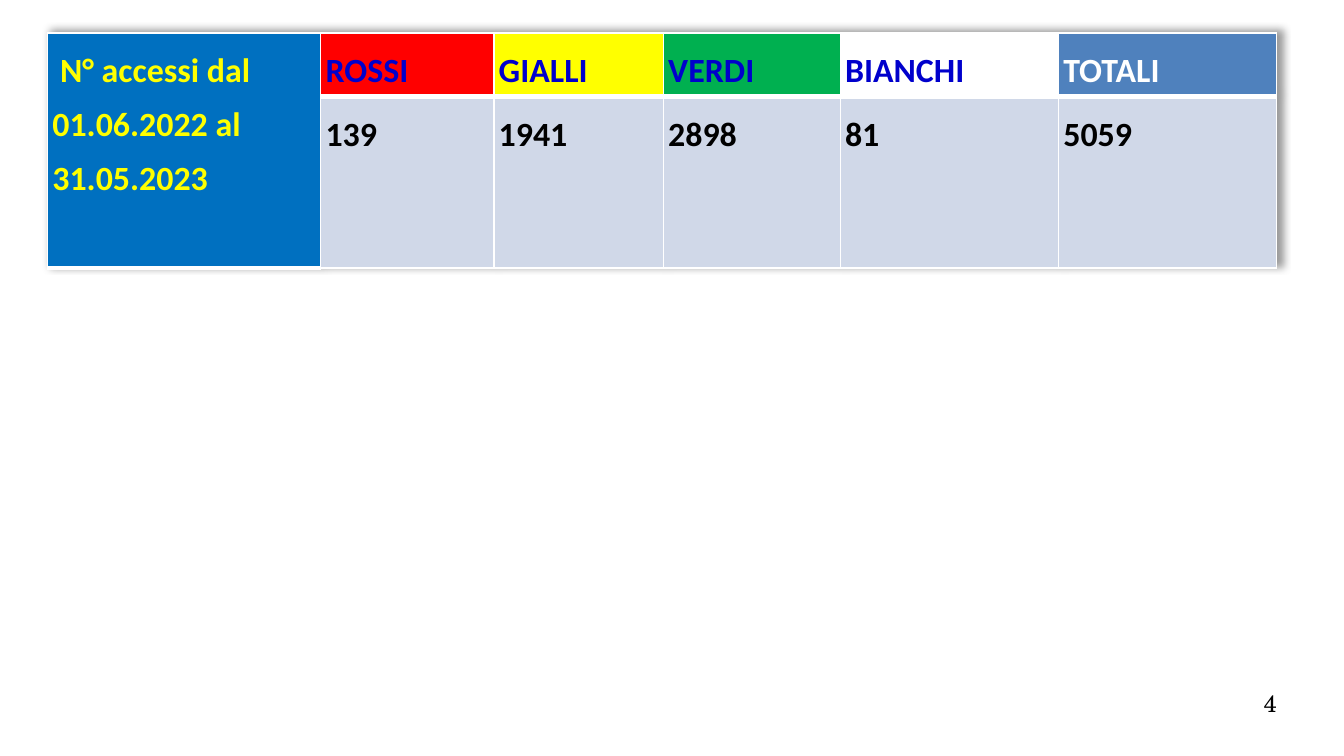
from lxml import etree
from pptx import Presentation
from pptx.dml.color import RGBColor
from pptx.enum import text
from pptx.oxml import parse_xml
from pptx.oxml.ns import nsdecls, qn
from pptx.util import Inches, Pt

COLORS = {
    "white": "FFFFFF", "black": "000000", "navy": "0000CC", "blue": "0070C0",
    "red": "FF0000", "yellow": "FFFF00", "green": "00B050",
    "steel": "4F81BD", "pale": "D0D8E8",
}
PERIOD = "\N{NO-BREAK SPACE}N° accessi dal 01.06.2022 al 31.05.2023"
# heading, value, width, heading fill, heading colour
COLUMNS = [
    (PERIOD, "", 2.24, "blue", "yellow"),
    ("ROSSI", "139", 1.42, "red", "navy"),
    ("GIALLI", "1941", 1.39, "yellow", "navy"),
    ("VERDI", "2898", 1.45, "green", "navy"),
    ("BIANCHI", "81", 1.79, "white", "navy"),
    ("TOTALI", "5059", 1.79, "steel", "white"),
]
ROW_HEIGHTS = [0.33, 1.01]
TABLE_BOX = [0.39, 0.27, 10.08, 1.48]
PAGE_NUMBER, PAGE_BOX = "4", [7.9, 5.65, 2.57, 0.43]
CELL_MARGIN = 0.04
SIDES = ("left", "top", "right", "bottom")


def write(paragraph, words, color, size, font, bold=False):
    run = paragraph.add_run()
    run.text = words
    for name, value in {"size": Pt(size), "name": font, "bold": bold}.items():
        setattr(run.font, name, value)
    run.font.color.rgb = RGBColor.from_string(COLORS[color])


def set_margins(holder, inches):
    for side in SIDES:
        setattr(holder, f"margin_{side}", Inches(inches))


def add_borders(cell, bottom_width):
    properties = cell._tc.get_or_add_tcPr()
    for side, width in zip("LRTB", (1, 1, 1, bottom_width)):
        line = etree.SubElement(properties, qn(f"a:ln{side}"), w=str(Pt(width)))
        fill = etree.SubElement(line, qn("a:solidFill"))
        etree.SubElement(fill, qn("a:srgbClr"), val=COLORS["white"])


def fill_cell(cell, words, fill, color, bottom_width):
    add_borders(cell, bottom_width)
    cell.fill.solid()
    cell.fill.fore_color.rgb = RGBColor.from_string(COLORS[fill])
    set_margins(cell, CELL_MARGIN)
    paragraph = cell.text_frame.paragraphs[0]
    paragraph.line_spacing, paragraph.space_after = 1.3, Pt(10)
    if words:
        write(paragraph, words, color, 20, "Calibri", bold=True)


def add_access_table(slide):
    frame = slide.shapes.add_table(2, len(COLUMNS), *map(Inches, TABLE_BOX))
    table = frame.table
    for row, height in zip(table.rows, ROW_HEIGHTS):
        row.height = Inches(height)
    for index, (heading, value, width, fill, color) in enumerate(COLUMNS):
        table.columns[index].width = Inches(width)
        fill_cell(table.cell(0, index), heading, fill, color, 3)
        fill_cell(table.cell(1, index), value, "pale" if value else fill, "black", 1)
    table.cell(0, 0).merge(table.cell(1, 0))
    frame.height = Inches(TABLE_BOX[3])
    table._tbl.tblPr.insert(0, parse_xml(
        f'<a:effectLst {nsdecls("a")}><a:outerShdw blurRad="50800" dist="38100" '
        f'dir="18900000" algn="bl" rotWithShape="0"><a:srgbClr val="{COLORS["black"]}">'
        '<a:alpha val="40000"/></a:srgbClr></a:outerShdw></a:effectLst>'))


def add_page_number(slide):
    frame = slide.shapes.add_textbox(*map(Inches, PAGE_BOX)).text_frame
    frame.word_wrap = True
    set_margins(frame, 0)
    paragraph = frame.paragraphs[0]
    paragraph.alignment = text.PP_ALIGN.RIGHT
    write(paragraph, PAGE_NUMBER, "black", 14, "TeX Gyre Schola")


def main():
    deck = Presentation()
    deck.slide_width, deck.slide_height = Inches(11.02), Inches(6.2)
    slide = deck.slides.add_slide(deck.slide_layouts[6])
    add_access_table(slide)
    add_page_number(slide)
    deck.save("out.pptx")


if __name__ == "__main__":
    main()
